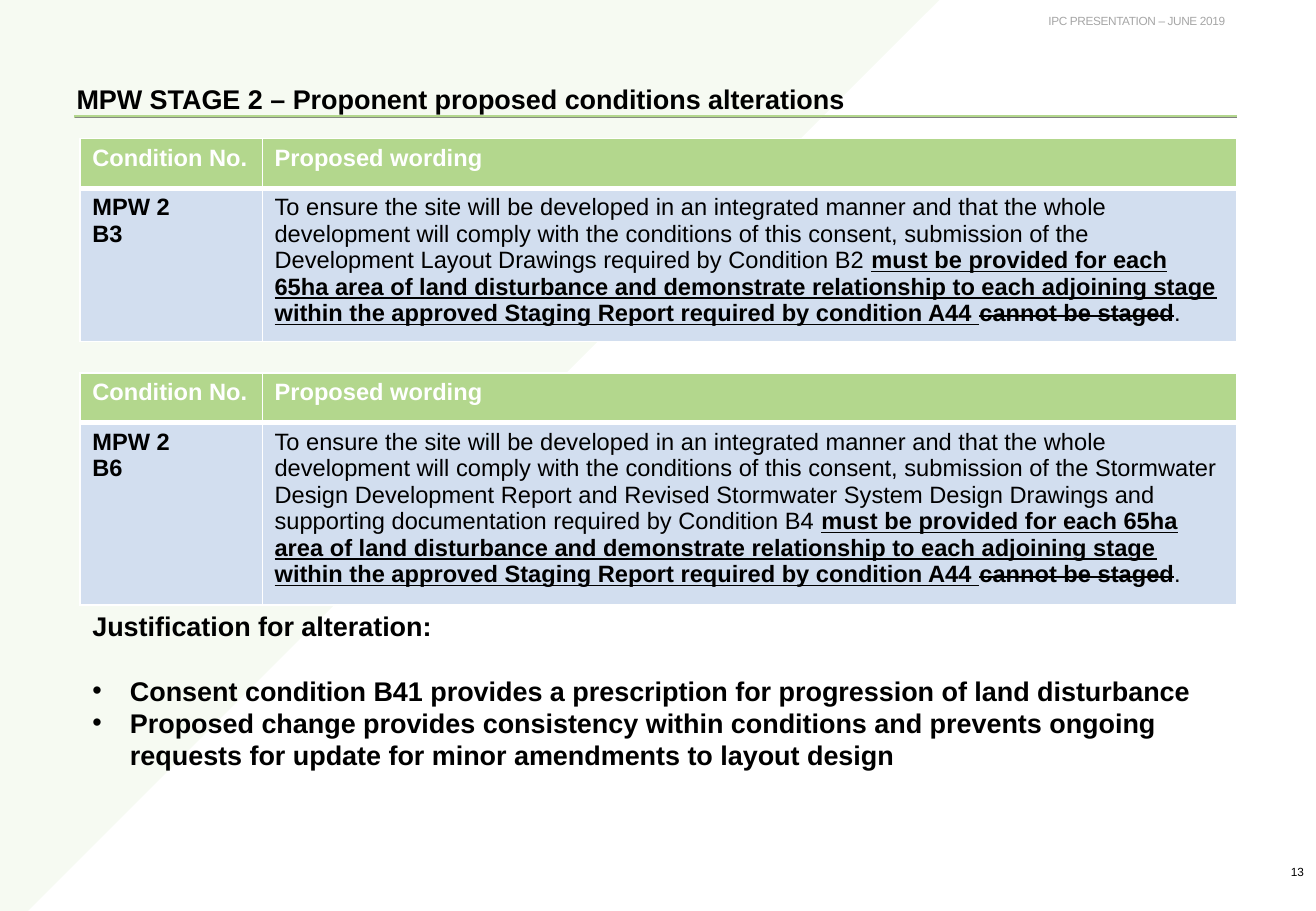
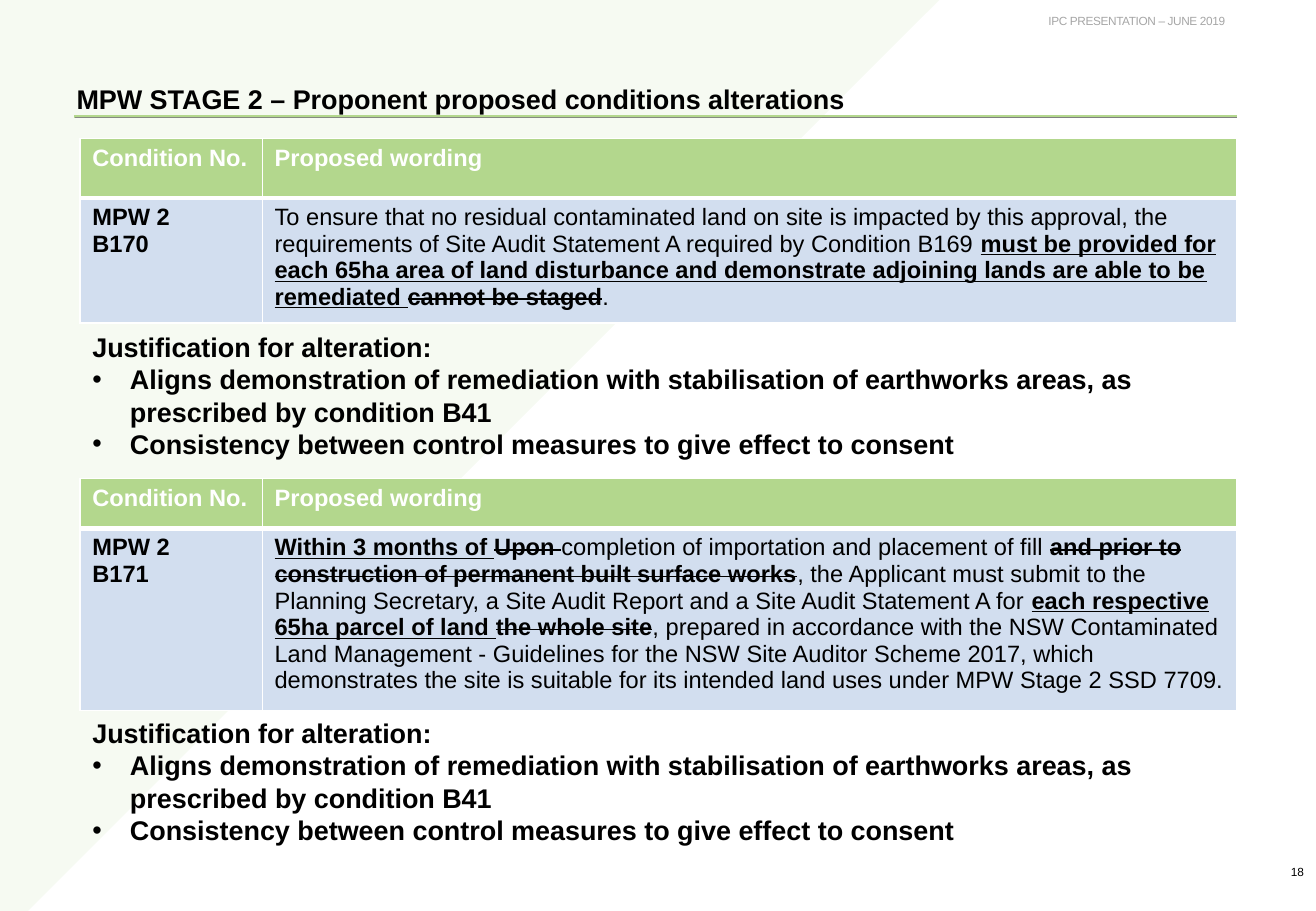
from pptx import Presentation
from pptx.dml.color import RGBColor
from pptx.enum.shapes import MSO_CONNECTOR as Connector, MSO_SHAPE as Shape
from pptx.enum.text import MSO_ANCHOR as Anchor, MSO_AUTO_SIZE as AutoSize, PP_ALIGN as Align
from pptx.oxml.ns import qn
from pptx.oxml.xmlchemy import OxmlElement
from pptx.util import Inches, Pt

GREEN, BLUE, GREY, PALE_GREY = "B3D78D", "D2DEEF", "808080", "A6A6A6"
BLACK, WHITE = "000000", "FFFFFF"
LEFT, WIDTH, RIGHT = 0.66, 9.51, 10.18
TITLE = "MPW STAGE 2 – Proponent proposed conditions alterations"
KEEP = {}
ADD = {"bold": True, "underline": True}
CUT = {"bold": True, "strike": True}


def color(value):
    return RGBColor.from_string(value)


def child(parent, tag, **values):
    element = OxmlElement(tag)
    for name, value in values.items():
        element.set(name, str(value))
    parent.append(element)
    return element


class Deck:
    """Holds the shared style and the current slide."""

    def __init__(self):
        self.deck = Presentation()
        self.deck.slide_width, self.deck.slide_height = Inches(10.83), Inches(7.5)
        self.page = None

    # Slide, title and number
    def slide(self, number, list_count):
        layout = self.deck.slide_layouts[1 if list_count == 1 else 3]
        self.page = self.deck.slides.add_slide(layout)
        if len(self.deck.slides) == 1:
            self.master()
        title = self.page.shapes.title
        self.place(title, 0.53, 0.63, 9.65, 0.51)
        para = title.text_frame.paragraphs[0]
        para.alignment = Align.LEFT
        self.span(para, TITLE, 16, BLACK, bold=True)
        self.text(str(number), 10.06, 7.12, 0.77, 0.12, BLACK, Anchor.MIDDLE)
        self.bodies = iter(list(self.page.placeholders)[1:])

    # Background, rules and header shared by every slide
    def master(self):
        triangle = self.page.shapes.add_shape(
            Shape.RIGHT_TRIANGLE, Inches(0), Inches(-0.37), Inches(8.1), Inches(8.1))
        triangle.rotation = 90
        triangle.shadow.inherit = False
        triangle.fill.solid()
        triangle.fill.fore_color.rgb = color(GREEN)
        tint = triangle.element.spPr.find(qn("a:solidFill"))[0]
        child(tint, "a:alpha", val=11000)
        triangle.line.fill.background()
        header, span = self.text("IPC PRESENTATION – JUNE 2019", 7.23, 0.06, 2.95, 0.22,
                                 PALE_GREY, Anchor.TOP)
        span.font._element.set("spc", "-20")
        parts = [self.rule(0.61, 0.96, GREEN, 1.75), self.rule(0.62, 0.97, GREY, 0.5),
                 triangle, header]
        tree = self.deck.slide_master.shapes.element
        for shape_id, part in enumerate(parts, 101):
            part.element.xpath("./*/p:cNvPr")[0].set("id", str(shape_id))
            tree.append(part.element)

    def rule(self, left, top, tone, weight):
        line = self.page.shapes.add_connector(
            Connector.STRAIGHT, Inches(left), Inches(top), Inches(RIGHT), Inches(top))
        line.line.color.rgb = color(tone)
        line.line.width = Pt(weight)
        child(line.element.spPr, "a:effectLst")
        return line

    # Text
    def place(self, box, left, top, width, height):
        box.left, box.top = Inches(left), Inches(top)
        box.width, box.height = Inches(width), Inches(height)
        frame = box.text_frame
        frame.word_wrap = True
        frame.auto_size = AutoSize.NONE
        frame.vertical_anchor = Anchor.TOP

    def span(self, para, words, size, tone, strike=False, **values):
        span = para.add_run()
        span.text = words
        style = {"name": "Arial", "size": Pt(size), "bold": False, **values}
        for name, value in style.items():
            setattr(span.font, name, value)
        span.font.color.rgb = color(tone)
        if strike:
            span.font._element.set("strike", "sngStrike")
        return span

    def text(self, words, left, top, width, height, tone, anchor):
        box = self.page.shapes.add_textbox(0, 0, 0, 0)
        self.place(box, left, top, width, height)
        frame = box.text_frame
        frame.vertical_anchor = anchor
        if anchor == Anchor.MIDDLE:
            frame.margin_top = frame.margin_bottom = 0
        para = frame.paragraphs[0]
        para.alignment = Align.RIGHT
        return box, self.span(para, words, 7, tone)

    def justification(self, top, height, points, gap=0):
        box = next(self.bodies)
        self.place(box, LEFT, top, WIDTH, height)
        frame = box.text_frame
        for index, words in enumerate(["Justification for alteration:", *points]):
            para = frame.add_paragraph() if index else frame.paragraphs[0]
            props = para._p.get_or_add_pPr()
            indent = Inches(0.31) if index else 0
            props.set("marL", str(indent))
            props.set("indent", str(-indent))
            if index:
                child(props, "a:buFont", typeface="Arial")
                child(props, "a:buChar", char="•")
            else:
                child(props, "a:buNone")
            para.space_before = Pt(gap if index == 1 else 0)
            self.span(para, words, 16, BLACK, bold=True)

    # Condition table
    def condition(self, top, heights, number, wording):
        table = self.page.shapes.add_table(
            2, 2, Inches(LEFT), Inches(top), Inches(WIDTH), Inches(sum(heights))).table
        table.first_row = table.horz_banding = False
        for column, width in zip(table.columns, (1.5, 8.02)):
            column.width = Inches(width)
        for row, height in zip(table.rows, heights):
            row.height = Inches(height)
        for column, words in enumerate(["Condition No.", "Proposed wording"]):
            head = self.cell(table, 0, column, GREEN)
            self.span(head.paragraphs[0], words, 14, WHITE, bold=True)
        label = self.cell(table, 1, 0, BLUE)
        for para, words in zip((label.paragraphs[0], label.add_paragraph()),
                               ("MPW 2", number)):
            self.span(para, words, 14, BLACK, bold=True)
        para = self.cell(table, 1, 1, BLUE).paragraphs[0]
        for words, style in wording:
            self.span(para, words, 14, BLACK, **style)

    def cell(self, table, row, column, tone):
        cell = table.cell(row, column)
        props = cell._tc.get_or_add_tcPr()
        heavy = "T" if row else "B"
        for side in "LRTB":
            edge = child(props, f"a:ln{side}", w=Pt(3 if side == heavy else 1))
            child(child(edge, "a:solidFill"), "a:srgbClr", val=WHITE)
        cell.fill.solid()
        cell.fill.fore_color.rgb = color(tone)
        return cell.text_frame


def staged(subject):
    return [
        ("To ensure the site will be developed in an integrated manner and that the whole "
         "development will comply with the conditions of this consent, submission of the "
         f"{subject} ", KEEP),
        ("must be provided for each 65ha area of land disturbance and demonstrate "
         "relationship to each adjoining stage within the approved Staging Report required "
         "by condition A44 ", ADD),
        ("cannot be staged", CUT),
        (".", KEEP),
    ]


REMEDIATION = [
    ("To ensure that no residual contaminated land on site is impacted by this approval, the "
     "requirements of Site Audit Statement A required by Condition B169 ", KEEP),
    ("must be provided for each 65ha area of land disturbance and demonstrate adjoining lands "
     "are able to be remediated ", ADD),
    ("cannot be staged", CUT),
    (".", KEEP),
]
SITE_AUDIT = [
    ("Within 3 months of ", ADD),
    ("Upon ", CUT),
    ("completion of importation and placement of fill ", KEEP),
    ("and prior to construction of permanent built surface works", CUT),
    (", the Applicant must submit to the Planning Secretary, a Site Audit Report and a Site "
     "Audit Statement A for ", KEEP),
    ("each respective 65ha parcel of land ", ADD),
    ("the whole site", CUT),
    (", prepared in accordance with the NSW Contaminated Land Management - Guidelines for the "
     "NSW Site Auditor Scheme 2017, which demonstrates the site is suitable for its intended "
     "land uses under MPW Stage 2 SSD 7709.", KEEP),
]
LAYOUT_REASONS = [
    "Consent condition B41 provides a prescription for progression of land disturbance",
    "Proposed change provides consistency within conditions and prevents ongoing requests for "
    "update for minor amendments to layout design",
]
AUDIT_REASONS = [
    "Aligns demonstration of remediation with stabilisation of earthworks areas, as prescribed "
    "by condition B41",
    "Consistency between control measures to give effect to consent",
]


def main():
    show = Deck()

    # Development layout and stormwater conditions
    show.slide(13, list_count=1)
    show.condition(1.14, (0.41, 1.26), "B3", staged(
        "Development Layout Drawings required by Condition B2"))
    show.condition(3.07, (0.41, 1.5), "B6", staged(
        "Stormwater Design Development Report and Revised Stormwater System Design Drawings "
        "and supporting documentation required by Condition B4"))
    show.justification(4.97, 1.45, LAYOUT_REASONS, gap=19)

    # Contamination conditions
    show.slide(18, list_count=2)
    show.condition(1.14, (0.49, 1.03), "B170", REMEDIATION)
    show.justification(2.67, 1.25, AUDIT_REASONS)
    show.condition(3.94, (0.41, 1.5), "B171", SITE_AUDIT)
    show.justification(5.85, 1.25, AUDIT_REASONS)

    show.deck.save("out.pptx")


if __name__ == "__main__":
    main()
